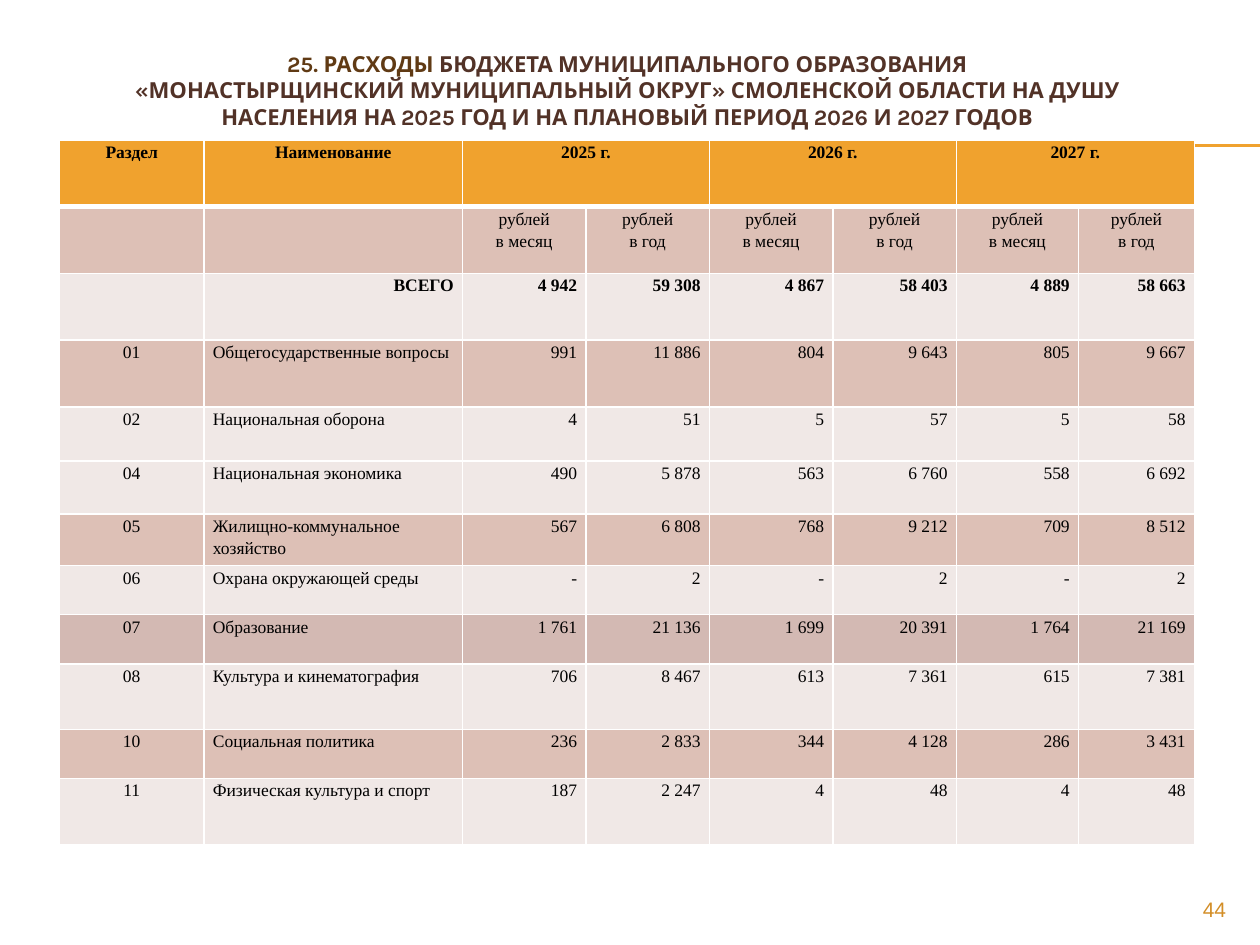
"""Build the slide with budget spending per resident for 2025-2027."""
from lxml.etree import SubElement
from pptx import Presentation
from pptx.dml.color import RGBColor
from pptx.enum.shapes import MSO_CONNECTOR as Connector
from pptx.enum.text import MSO_ANCHOR as Anchor, MSO_AUTO_SIZE as AutoSize, PP_ALIGN as Align
from pptx.oxml.ns import qn
from pptx.util import Inches, Pt

COLORS = {"gold": "F0A22E", "number": "D38E27", "brown": "603A14", "title": "523227",
          "dark": "DDC0B6", "light": "F0E8E6", "rose": "D3B9B3", "white": "FFFFFF", "black": "000000"}
TITLE = [
    ("25. РАСХОДЫ ", "brown"),
    ("БЮДЖЕТА МУНИЦИПАЛЬНОГО ОБРАЗОВАНИЯ\v«МОНАСТЫРЩИНСКИЙ МУНИЦИПАЛЬНЫЙ ОКРУГ» СМОЛЕНСКОЙ ОБЛАСТИ "
     "НА ДУШУ НАСЕЛЕНИЯ НА 2025 ГОД И НА ПЛАНОВЫЙ ПЕРИОД 2026 И 2027 ГОДОВ", "title"),
]
PAGE_NUMBER = "44"
YEARS = ["2025 г.", "2026 г.", "2027 г."]
HEADER = ["Раздел", "Наименование"] + [text for year in YEARS for text in (year, "")]
UNITS = ["", ""] + ["рублей\nв месяц", "рублей\nв год"] * len(YEARS)
ROWS = [
    ("gold", 0.53, HEADER),
    ("dark", 0.53, UNITS),
    ("light", 0.53, ["", "ВСЕГО", "4 942", "59 308", "4 867", "58 403", "4 889", "58 663"]),
    ("dark", 0.53, ["01", "Общегосударственные вопросы", "991", "11 886", "804", "9 643", "805", "9 667"]),
    ("light", 0.43, ["02", "Национальная оборона", "4", "51", "5", "57", "5", "58"]),
    ("light", 0.42, ["04", "Национальная экономика", "490", "5 878", "563", "6 760", "558", "6 692"]),
    ("dark", 0.41, ["05", "Жилищно-коммунальное хозяйство", "567", "6 808", "768", "9 212", "709", "8 512"]),
    ("light", 0.39, ["06", "Охрана окружающей среды", "-", "2", "-", "2", "-", "2"]),
    ("rose", 0.39, ["07", "Образование", "1 761", "21 136", "1 699", "20 391", "1 764", "21 169"]),
    ("light", 0.52, ["08", "Культура и кинематография", "706", "8 467", "613", "7 361", "615", "7 381"]),
    ("dark", 0.39, ["10", "Социальная политика", "236", "2 833", "344", "4 128", "286", "3 431"]),
    ("light", 0.53, ["11", "Физическая культура и спорт", "187", "2 247", "4", "48", "4", "48"]),
]
COLUMNS = [1.15, 2.05, 0.98, 0.98, 0.98, 0.98, 0.97, 0.92]
HEADER_ROW, UNIT_ROW, TOTAL_ROW = range(3)
CODE_COLUMN, NAME_COLUMN, FIRST_VALUE = range(3)


def rgb(name):
    return RGBColor.from_string(COLORS[name])


def apply(target, **values):
    for name, value in values.items():
        setattr(target, name, value)


def style_font(font, face, size, color, bold=False):
    apply(font, name=face, size=Pt(size), bold=bold)
    font.color.rgb = rgb(color)


def add_rule(page, y):
    rule = page.shapes.add_connector(Connector.STRAIGHT, Inches(0.56), Inches(y), Inches(10), Inches(y))
    rule.line.color.rgb = rgb("gold")
    rule.line.width = Pt(0.75)
    SubElement(rule._element.spPr, qn("a:effectLst"))


def add_title(page):
    title = page.shapes.title
    apply(title, left=Inches(0.5), top=Inches(0.35), width=Inches(8.95), height=Inches(0.74))
    apply(title.text_frame, word_wrap=True, auto_size=AutoSize.NONE, vertical_anchor=Anchor.TOP)
    para = title.text_frame.paragraphs[0]
    apply(para, alignment=Align.CENTER, line_spacing=Pt(15.1))
    for text, color in TITLE:
        for index, line in enumerate(text.split("\v")):
            if index:
                para.add_line_break()
            span = para.add_run()
            span.text = line
            style_font(span.font, "Karla", 12.6, color, True)


def set_borders(cell, widths):
    properties = cell._tc.get_or_add_tcPr()
    for index, (side, width) in enumerate(widths.items()):
        line = properties.makeelement(qn(f"a:ln{side}"), {"w": str(Pt(width))})
        fill = SubElement(line, qn("a:solidFill"))
        SubElement(fill, qn("a:srgbClr"), {"val": COLORS["white"]})
        properties.insert(index, line)


def cell_alignment(row, column):
    if row <= UNIT_ROW or column == CODE_COLUMN:
        return Align.CENTER
    if row == TOTAL_ROW or column >= FIRST_VALUE:
        return Align.RIGHT
    return Align.LEFT


def fill_cell(cell, text, row, column, tone):
    side = Inches(0.07)
    apply(cell, text=text, margin_left=side, margin_right=side, margin_top=0, margin_bottom=0)
    cell.fill.solid()
    cell.fill.fore_color.rgb = rgb(tone)
    set_borders(cell, {"L": 1, "R": 1, "T": 3 if row == UNIT_ROW else 1, "B": 3 if row == HEADER_ROW else 1})
    for para in cell.text_frame.paragraphs:
        apply(para, alignment=cell_alignment(row, column), line_spacing=1.15)
        style_font(para.font, "Times New Roman", 10, "black", row in (HEADER_ROW, TOTAL_ROW))


def add_spending_table(page):
    height = sum(row_height for _, row_height, _ in ROWS)
    frame = page.shapes.add_table(len(ROWS), len(COLUMNS), Inches(0.47), Inches(1.11),
                                  Inches(sum(COLUMNS)), Inches(height))
    table = frame.table
    for column, width in zip(table.columns, COLUMNS):
        column.width = Inches(width)
    for row, (tone, row_height, texts) in enumerate(ROWS):
        table.rows[row].height = Inches(row_height)
        for column, text in enumerate(texts):
            fill_cell(table.cell(row, column), text, row, column, tone)
    for column in range(FIRST_VALUE, len(COLUMNS), 2):
        table.cell(HEADER_ROW, column).merge(table.cell(HEADER_ROW, column + 1))


def add_page_number(page):
    box = page.shapes.add_textbox(Inches(9), Inches(7.08), Inches(0.83), Inches(0.27))
    apply(box.text_frame, word_wrap=True, vertical_anchor=Anchor.MIDDLE)
    para = box.text_frame.paragraphs[0]
    apply(para, text=PAGE_NUMBER, alignment=Align.RIGHT)
    style_font(para.font, "Arial", 12, "number")


def main():
    deck = Presentation()
    apply(deck, slide_width=Inches(10), slide_height=Inches(7.5))
    page = deck.slides.add_slide(deck.slide_layouts[5])
    for y in (1.15, 1.16):
        add_rule(page, y)
    add_title(page)
    add_spending_table(page)
    add_page_number(page)
    deck.save("out.pptx")


if __name__ == "__main__":
    main()
